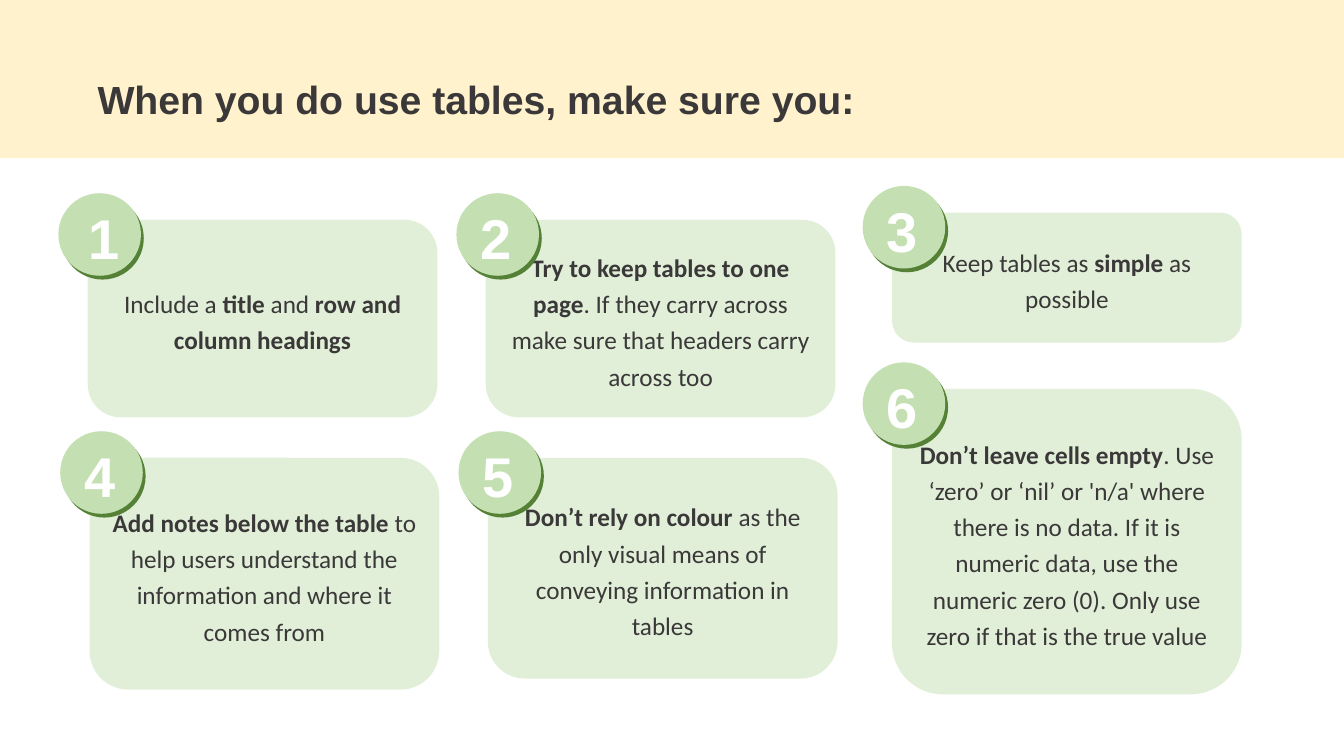
from pptx import Presentation
from pptx.dml.color import RGBColor
from pptx.enum.shapes import MSO_SHAPE
from pptx.enum.text import MSO_ANCHOR, PP_ALIGN
from pptx.util import Pt

TITLE = "When you do use tables, make sure you:"
INK, WHITE = "3A3838", "FFFFFF"
BAND, CARD, BADGE, BADGE_EDGE = "FFF2CC", "E1EFD8", "C4E0B2", "548135"

# Card: left, top, height, then runs as (text, bold)
CARDS = [
    (62.7, 157, 141.1, [("Include a ", False), ("title", True), (" and ", False),
                        ("row and column headings", True)]),
    (347, 157, 141.1, [("Try to keep tables to one page", True),
                       (". If they carry across make sure that headers carry across too", False)]),
    (637.2, 151.8, 92.9, [("Keep tables as ", False), ("simple ", True), ("as possible", False)]),
    (64, 327, 165.6, [("Add notes below the table ", True),
                      ("to help users understand the information and where it comes from", False)]),
    (348.5, 327, 157.7, [("Don’t rely on colour ", True),
                         ("as the only visual means of conveying information in tables", False)]),
    (637.2, 277.8, 218.2, [("Don’t leave cells empty", True),
                           (". Use ‘zero’ or ‘nil’ or 'n/a' where there is no data. "
                            "If it is numeric data, use the numeric zero (0). "
                            "Only use zero if that is the true value", False)]),
]
CARD_WIDTH = 249.8
CORNER = 0.167
BADGE_SIZE = 59
BADGE_SHIFT = (-21, -19)  # from the card's corner
EDGE_SHIFT = (2, 2.7)     # from the badge's corner
NUMBER_SHIFT = {1: 14.4}  # the narrow digit sits further right
NUMBER_SHIFT_DEFAULT = 10


def rgb(value):
    return RGBColor.from_string(value)


def add_filled(kind, left, top, width, height, color):
    sp = slide.shapes.add_shape(kind, Pt(left), Pt(top), Pt(width), Pt(height))
    sp.shadow.inherit = False
    sp.fill.solid()
    sp.fill.fore_color.rgb = rgb(color)
    sp.line.fill.background()
    return sp


def write(sp, runs, size, font, color, spacing, align):
    tf = sp.text_frame
    tf.word_wrap = True
    tf.vertical_anchor = MSO_ANCHOR.MIDDLE
    p = tf.paragraphs[0]
    p.alignment = align
    p.line_spacing = spacing
    for text, bold in runs:
        r = p.add_run()
        r.text = text
        for name, value in {"size": Pt(size), "name": font, "bold": bold}.items():
            setattr(r.font, name, value)
        r.font.color.rgb = rgb(color)


def add_heading(text, left, top, width, height, size, color):
    box = slide.shapes.add_textbox(Pt(left), Pt(top), Pt(width), Pt(height))
    write(box, [(text, True)], size, "Arial", color, 1.07, PP_ALIGN.LEFT)


def add_badge(number, left, top):
    for dx, dy, color in ((*EDGE_SHIFT, BADGE_EDGE), (0, 0, BADGE)):
        add_filled(MSO_SHAPE.OVAL, left + dx, top + dy, BADGE_SIZE, BADGE_SIZE, color)
    shift = NUMBER_SHIFT.get(number, NUMBER_SHIFT_DEFAULT)
    add_heading(str(number), left + shift, top + 11.5, 46.8, 36.7, 40, WHITE)


prs = Presentation()
prs.slide_width, prs.slide_height = Pt(960), Pt(540)
slide = prs.slides.add_slide(prs.slide_layouts[6])

add_filled(MSO_SHAPE.RECTANGLE, 0, 0, 960, 113, BAND)
add_heading(TITLE, 62.6, 46.8, 681.8, 45.4, 28, INK)

for number, (left, top, height, runs) in enumerate(CARDS, 1):
    card = add_filled(MSO_SHAPE.ROUNDED_RECTANGLE, left, top, CARD_WIDTH, height, CARD)
    card.adjustments[0] = CORNER
    write(card, runs, 18, "Calibri", INK, 1.2, PP_ALIGN.CENTER)
    add_badge(number, left + BADGE_SHIFT[0], top + BADGE_SHIFT[1])

prs.save("out.pptx")
